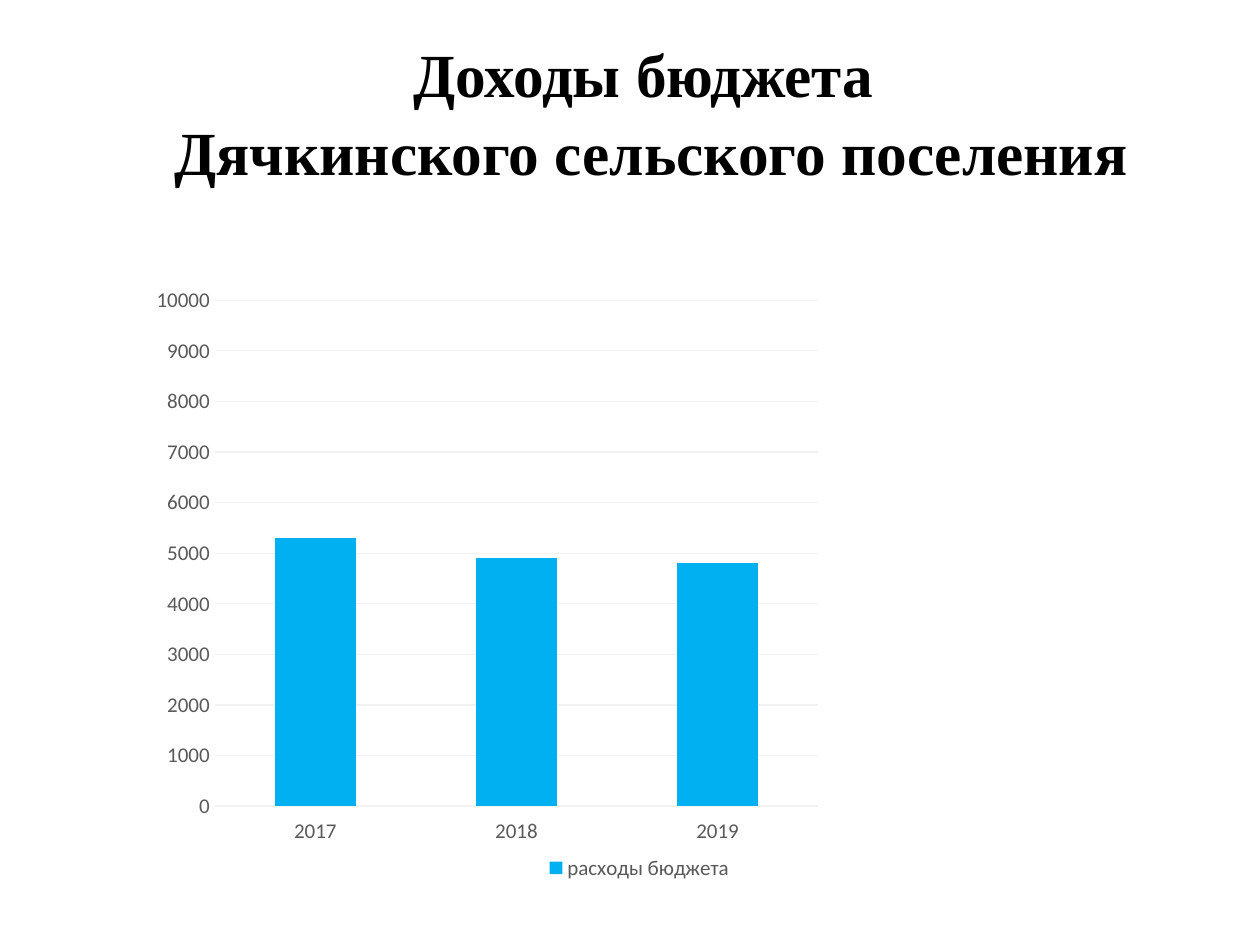
from dataclasses import dataclass

from lxml.etree import SubElement
from pptx import Presentation
from pptx.chart.data import CategoryChartData
from pptx.dml.color import RGBColor
from pptx.enum.chart import XL_CHART_TYPE as ChartType
from pptx.enum.chart import XL_LEGEND_POSITION as LegendPosition
from pptx.enum.chart import XL_TICK_LABEL_POSITION as LabelPosition
from pptx.enum.chart import XL_TICK_MARK as TickMark
from pptx.enum.text import MSO_ANCHOR as Anchor
from pptx.enum.text import PP_ALIGN as Align
from pptx.oxml.ns import qn
from pptx.util import Inches, Pt


@dataclass(frozen=True)
class Theme:
    title_font: str = "Times New Roman"
    chart_font: str = "Calibri"
    title_size: int = 35
    chart_size: int = 12
    title_color: str = "000000"
    label_color: str = "595959"
    grid_color: str = "F2F2F2"
    bar_color: str = "00B0F0"


theme = Theme()


def set_font(font, name, size, color, bold=False):
    for attribute, value in {"name": name, "size": Pt(size), "bold": bold}.items():
        setattr(font, attribute, value)
    font.color.rgb = RGBColor.from_string(color)


def slide_box(left, top, width, height):
    """Turn shares of the slide's size into lengths."""
    across, down = presentation.slide_width, presentation.slide_height
    return int(left * across), int(top * down), int(width * across), int(height * down)


presentation = Presentation()
presentation.slide_width, presentation.slide_height = Inches(10), Inches(7.5)
slide = presentation.slides.add_slide(presentation.slide_layouts[6])

# Title
title = slide.shapes.add_textbox(*slide_box(0.067, 0.033, 0.9, 0.167))
title_frame = title.text_frame
title_frame.word_wrap = True
title_frame.vertical_anchor = Anchor.MIDDLE
title_frame.text = "Доходы бюджета \nДячкинского сельского поселения"
for paragraph in title_frame.paragraphs:
    paragraph.alignment = Align.CENTER
    paragraph.line_spacing = 1.05
    set_font(paragraph.runs[0].font, theme.title_font, theme.title_size, theme.title_color, bold=True)

# Budget chart
budget = CategoryChartData()
budget.categories = ["2017", "2018", "2019"]
budget.add_series("расходы бюджета", [5300, 4900, 4800])
chart = slide.shapes.add_chart(
    ChartType.COLUMN_CLUSTERED, *slide_box(0.064, 0.292, 0.887, 0.645), budget
).chart
set_font(chart.font, theme.chart_font, theme.chart_size, theme.label_color)
chart.has_title = False
chart.has_legend = True
chart.legend.position = LegendPosition.BOTTOM
chart.legend.include_in_layout = False

plot = chart.plots[0]
plot.gap_width = 150
plot.vary_by_categories = False
bar_fill = plot.series[0].format.fill
bar_fill.solid()
bar_fill.fore_color.rgb = RGBColor.from_string(theme.bar_color)

# Axes
for axis in (chart.category_axis, chart.value_axis):
    axis.major_tick_mark = axis.minor_tick_mark = TickMark.NONE
    axis.format.line.fill.background()
chart.category_axis.tick_label_position = LabelPosition.LOW
value_axis = chart.value_axis
for attribute, value in {
    "minimum_scale": 0, "maximum_scale": 10000, "major_unit": 1000, "has_major_gridlines": True,
}.items():
    setattr(value_axis, attribute, value)
grid_line = value_axis.major_gridlines.format.line
grid_line.width = Pt(0.75)
grid_line.color.rgb = RGBColor.from_string(theme.grid_color)

# Fixed inner plot area, as shares of the chart
plot_area = chart.plots[0]._element.getparent()
layout = plot_area.find(qn("c:layout"))
if layout is None:
    layout = SubElement(plot_area, qn("c:layout"))
    plot_area.insert(0, layout)
manual_layout = SubElement(layout, qn("c:manualLayout"))
for tag, value in {
    "layoutTarget": "inner", "xMode": "edge", "yMode": "edge",
    "x": 0.12, "y": 0.04, "w": 0.54, "h": 0.83,
}.items():
    SubElement(manual_layout, qn(f"c:{tag}")).set("val", str(value))

presentation.save("out.pptx")
